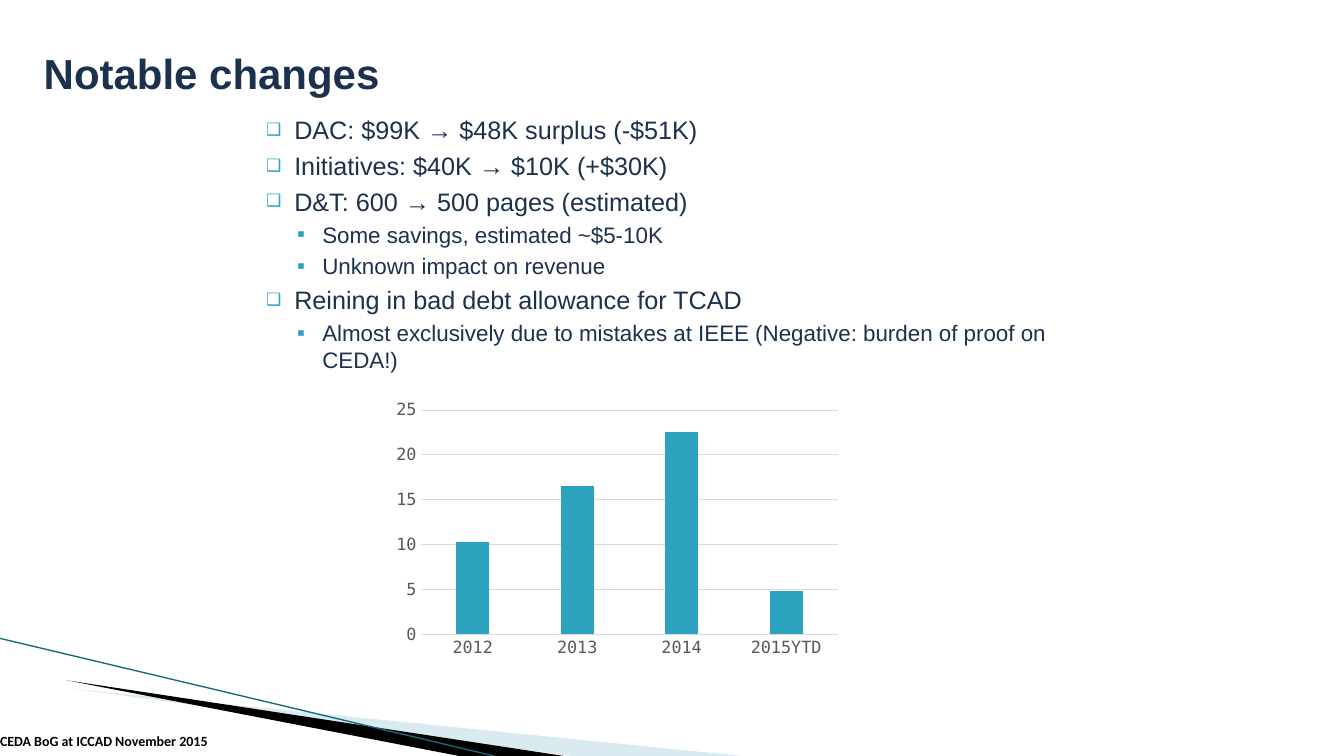
from dataclasses import dataclass

from lxml.etree import SubElement
from pptx import Presentation
from pptx.chart.data import CategoryChartData
from pptx.dml.color import RGBColor
from pptx.enum.chart import XL_CHART_TYPE as ChartType, XL_TICK_MARK as Tick
from pptx.enum.shapes import MSO_CONNECTOR as Connector
from pptx.enum.text import MSO_ANCHOR as Anchor, MSO_AUTO_SIZE as AutoSize, PP_ALIGN as Align
from pptx.oxml.ns import qn
from pptx.util import Pt

NAVY, TEAL, GRID, GRAY = "1C314E", "2DA2BF", "D9D9D9", "595959"
MONO = "DejaVu Sans Mono"


@dataclass
class Level:
    indent: float
    hanging: float
    before: float
    size: float
    bullet: str
    bullet_pct: int


@dataclass
class Item:
    text: str
    level: int = 0


@dataclass
class Wedge:
    points: list[tuple[float, float]]
    color: str
    opacity: int = 100


LEVELS = [Level(29, 20, 4, 18, "❑", 68), Level(49, 18, 3.2, 16, "▪", 100)]
ITEMS = [
    Item("DAC: $99K → $48K surplus (-$51K)"),
    Item("Initiatives: $40K → $10K (+$30K)"),
    Item("D&T: 600 → 500 pages (estimated)"),
    Item("Some savings, estimated ~$5-10K", 1),
    Item("Unknown impact on revenue", 1),
    Item("Reining in bad debt allowance for TCAD"),
    Item("Almost exclusively due to mistakes at IEEE (Negative: burden of proof on CEDA!)", 1),
]
WEDGES = [
    Wedge([(52.5, 492), (530, 540), (408, 540)], "A0CBDC", 40),
    Wedge([(48, 486), (403, 540), (328, 540)], "000000"),
]
BAD_DEBT = {"2012": 10.3, "2013": 16.5, "2014": 22.6, "2015YTD": 4.8}


def rgb(color: str) -> RGBColor:
    return RGBColor.from_string(color)


def format_font(font, color: str, **values) -> None:
    for name, value in values.items():
        setattr(font, name, value)
    font.color.rgb = rgb(color)


def place(sp, left: float, top: float, width: float, height: float) -> None:
    box = {"left": left, "top": top, "width": width, "height": height}
    for name, value in box.items():
        setattr(sp, name, Pt(value))


def format_frame(tf, **values) -> None:
    frame = {"word_wrap": True, "auto_size": AutoSize.NONE, **values}
    for name, value in frame.items():
        setattr(tf, name, value)


def draw_wedge(shapes, wedge: Wedge) -> None:
    points = [(Pt(x), Pt(y)) for x, y in wedge.points]
    builder = shapes.build_freeform(*points[0])
    builder.add_line_segments(points[1:], close=True)
    sp = builder.convert_to_shape()
    sp.shadow.inherit = False
    sp.fill.solid()
    sp.fill.fore_color.rgb = rgb(wedge.color)
    sp.line.fill.background()
    if wedge.opacity < 100:
        clr = sp.fill._xPr.find(f".//{qn('a:srgbClr')}")
        SubElement(clr, qn("a:alpha"), val=str(wedge.opacity * 1000))


def draw_edge(shapes) -> None:
    edge = shapes.add_connector(Connector.STRAIGHT, Pt(0), Pt(456), Pt(353), Pt(540))
    edge.line.color.rgb = rgb("16697A")
    edge.line.width = Pt(0.95)
    SubElement(edge._element.spPr, qn("a:effectLst"))


def write_item(p, item: Item, first: bool) -> None:
    level = LEVELS[item.level]
    p.level = item.level
    pPr = p._p.get_or_add_pPr()
    pPr.set("marL", str(Pt(level.indent)))
    pPr.set("indent", str(-Pt(level.hanging)))
    SubElement(SubElement(pPr, qn("a:buClr")), qn("a:srgbClr"), val=TEAL)
    SubElement(pPr, qn("a:buSzPct"), val=str(level.bullet_pct * 1000))
    SubElement(pPr, qn("a:buFont"), typeface="Arial")
    SubElement(pPr, qn("a:buChar"), char=level.bullet)
    p.space_before = Pt(0 if first else level.before)
    r = p.add_run()
    r.text = item.text
    format_font(r.font, NAVY, name="Arial", size=Pt(level.size))


def draw_chart(shapes) -> None:
    data = CategoryChartData()
    data.categories = list(BAD_DEBT)
    data.add_series("Series 1", list(BAD_DEBT.values()))
    frame = shapes.add_chart(
        ChartType.COLUMN_CLUSTERED, Pt(276.5), Pt(282), Pt(329), Pt(192), data)
    chart = frame.chart
    chart.has_legend = chart.has_title = False
    format_font(chart.font, "000000", name=MONO, size=Pt(10))

    plot = chart.plots[0]
    for name, value in {"gap_width": 219, "overlap": -27, "vary_by_categories": False}.items():
        setattr(plot, name, value)
    fill = plot.series[0].format.fill
    fill.solid()
    fill.fore_color.rgb = rgb(TEAL)

    cat, val = chart.category_axis, chart.value_axis
    for axis in (cat, val):
        axis.major_tick_mark = axis.minor_tick_mark = Tick.NONE
        format_font(axis.tick_labels.font, GRAY, name=MONO, size=Pt(12))
    for name, value in {"minimum_scale": 0, "maximum_scale": 25, "major_unit": 5}.items():
        setattr(val, name, value)
    val.format.line.fill.background()
    for line in (cat.format.line, val.major_gridlines.format.line):
        line.color.rgb = rgb(GRID)
        line.width = Pt(0.75)


def main() -> None:
    prs = Presentation()
    prs.slide_width, prs.slide_height = Pt(960), Pt(540)
    s = prs.slides.add_slide(prs.slide_layouts[1])

    for wedge in WEDGES:
        draw_wedge(s.shapes, wedge)
    draw_edge(s.shapes)

    title = s.shapes.title
    place(title, 24, 18, 744, 68)
    title.text_frame.text = "Notable changes"
    format_frame(title.text_frame, vertical_anchor=Anchor.MIDDLE)
    p = title.text_frame.paragraphs[0]
    p.alignment = Align.LEFT
    format_font(p.runs[0].font, NAVY, name="Arial", size=Pt(30), bold=True)

    body = s.placeholders[1]
    place(body, 174, 78, 630, 307)
    tf = body.text_frame
    format_frame(tf, vertical_anchor=Anchor.TOP)
    for i, item in enumerate(ITEMS):
        write_item(tf.add_paragraph() if i else tf.paragraphs[0], item, i == 0)

    draw_chart(s.shapes)

    footer = s.shapes.add_textbox(Pt(0), Pt(522), Pt(240), Pt(17))
    format_frame(footer.text_frame, vertical_anchor=Anchor.BOTTOM, margin_left=0)
    r = footer.text_frame.paragraphs[0].add_run()
    r.text = "CEDA BoG at ICCAD November 2015"
    format_font(r.font, "000000", name="Calibri", size=Pt(10), bold=True)

    prs.save("out.pptx")


if __name__ == "__main__":
    main()
